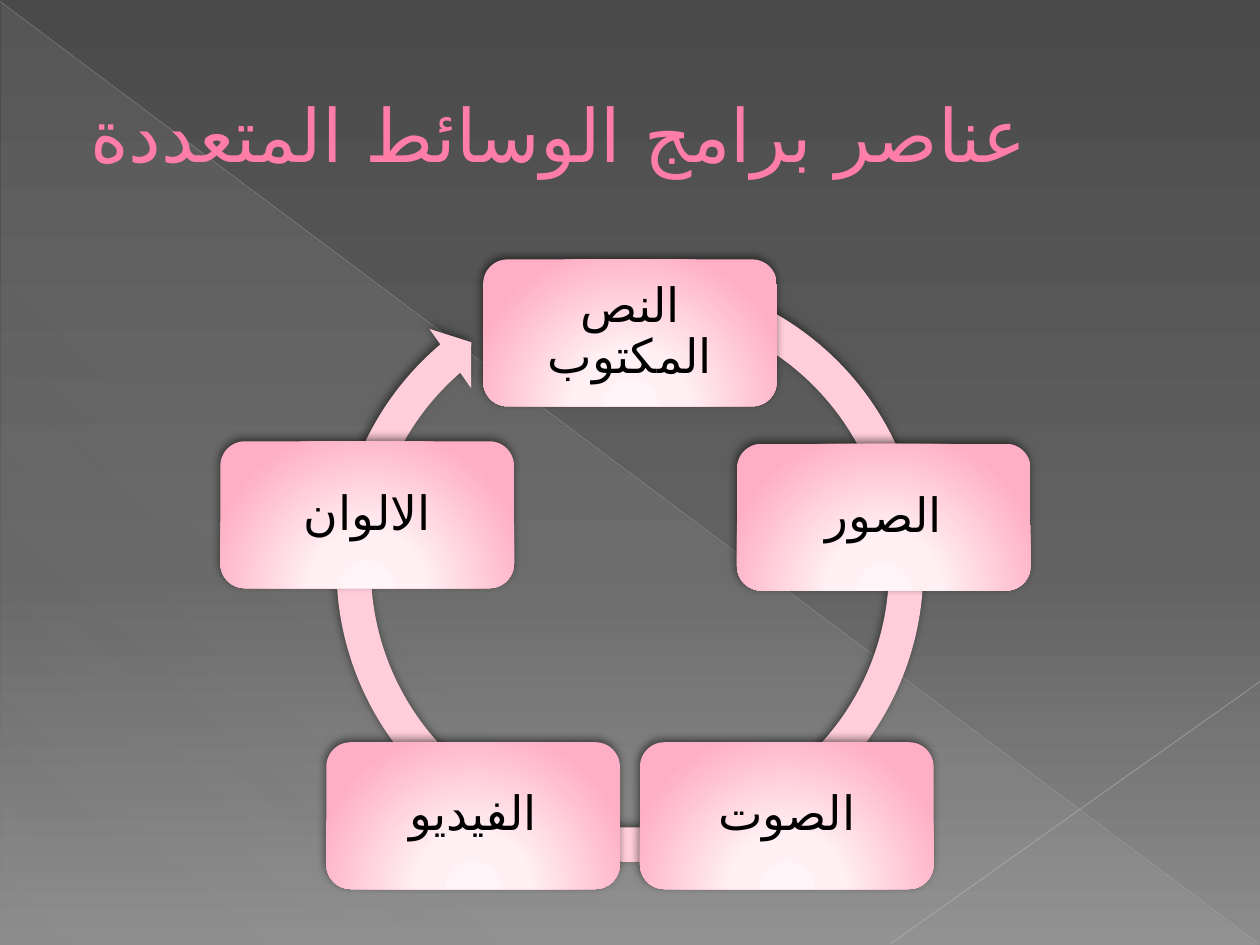
from dataclasses import dataclass
from math import cos, radians, sin

from lxml.etree import SubElement
from pptx import Presentation
from pptx.dml.color import RGBColor
from pptx.enum.shapes import MSO_CONNECTOR as Connector, MSO_SHAPE as Preset
from pptx.enum.text import MSO_ANCHOR as Anchor, PP_ALIGN as Align
from pptx.oxml import parse_xml
from pptx.oxml.ns import nsdecls, qn
from pptx.util import Cm, Pt

Stops = tuple[tuple[int, str, int], ...]  # position %, colour, opacity %


@dataclass(frozen=True)
class Theme:
    font: str = "Quicksand"
    arabic_font: str = "DejaVu Sans"  # Quicksand has no Arabic letters
    title_size: float = 42
    card_size: float = 27
    title: str = "FF7DA7"
    title_outline: str = "B12761"
    card_text: str = "000000"
    ring: str = "FFCEDA"
    shadow: str = "000000"
    backdrop: Stops = ((0, "4A4A4A", 100), (60, "626262", 100), (100, "8C8C8C", 100))
    sheen: Stops = ((0, "D2D2D2", 10), (70, "D2D2D2", 8), (100, "D2D2D2", 1))
    card: Stops = ((0, "FFF4F7", 100), (34, "FFF0F3", 100), (100, "FFAFC5", 100))


@dataclass(frozen=True)
class Ray:
    start: tuple[float, float]
    end: tuple[float, float]
    color: str
    width: float
    opacity: int


@dataclass(frozen=True)
class Element:
    label: str
    nudge: tuple[float, float] = (0, 0)


THEME = Theme()
RAYS = (
    Ray((0, 0.03), (25.37, 19.02), "BFBFBF", 0.39, 35),
    Ray((25.4, 13.74), (17.96, 19.02), "C6C6C6", 0.47, 45),
)
ELEMENTS = (
    Element("النص المكتوب"),
    Element("الصور"),
    Element("الصوت"),
    Element("الفيديو"),
    Element("الالوان", (-0.18, -0.05)),
)
CENTER_X, CENTER_Y, RADIUS = 12.7, 12.09, 5.38
CARD_W, CARD_H = 5.92, 2.96
RING_SIZE, RING_TOP = 12.6, 5.16
RING_ADJUSTMENTS = (0.055, 3.307, 137.661, 173.92, 0.058)
LINEAR = '<a:lin ang="{}" scaled="0"/>'
CARD_GLOW = ('<a:path path="circle"><a:fillToRect l="50000" t="155000" '
             'r="50000" b="-55000"/></a:path>')


def set_gradient(fill, properties, stops: Stops, direction: str) -> None:
    fill.solid()
    marks = "".join(
        f'<a:gs pos="{pos * 1000}"><a:srgbClr val="{color}">'
        f'<a:alpha val="{opacity * 1000}"/></a:srgbClr></a:gs>'
        for pos, color, opacity in stops)
    gradient = parse_xml(f'<a:gradFill {nsdecls("a")} rotWithShape="1">'
                         f'<a:gsLst>{marks}</a:gsLst>{direction}</a:gradFill>')
    properties.replace(properties.find(qn("a:solidFill")), gradient)


def add_shadow(shape) -> None:
    shape.shadow.inherit = False
    effects = shape.element.spPr.find(qn("a:effectLst"))
    effects.append(parse_xml(
        f'<a:outerShdw {nsdecls("a")} blurRad="{Pt(5)}" dist="{Pt(2)}" '
        f'dir="{245 * 60000}" rotWithShape="0"><a:srgbClr val="{THEME.shadow}">'
        '<a:alpha val="50000"/></a:srgbClr></a:outerShdw>'))


def add_rtl_run(paragraph, text: str, size: float, color: str):
    paragraph._p.get_or_add_pPr().set("rtl", "1")
    run = paragraph.add_run()
    run.text = text
    run.font.size = Pt(size)
    run.font.name = THEME.font
    run.font.color.rgb = RGBColor.from_string(color)
    SubElement(run.font._element, qn("a:cs")).set("typeface", THEME.arabic_font)
    return run


def add_ray(slide, ray: Ray) -> None:
    line = slide.shapes.add_connector(
        Connector.STRAIGHT, *(Cm(v) for v in ray.start + ray.end))
    line.line.width = Pt(ray.width)
    line.line.color.rgb = RGBColor.from_string(ray.color)
    properties = line.element.spPr
    color = properties.find(".//" + qn("a:srgbClr"))
    SubElement(color, qn("a:alpha")).set("val", str(ray.opacity * 1000))
    SubElement(properties, qn("a:effectLst"))


def add_backdrop(slide) -> None:
    fill = slide.background.fill
    fill.solid()
    set_gradient(fill, slide.element.find(".//" + qn("p:bgPr")),
                 THEME.backdrop, LINEAR.format(90 * 60000))
    sheen = slide.shapes.add_shape(
        Preset.RIGHT_TRIANGLE, Cm(0.03), Cm(0.05), Cm(25.35), Cm(19))
    sheen.shadow.inherit = False
    sheen.line.fill.background()
    set_gradient(sheen.fill, sheen.element.spPr, THEME.sheen, LINEAR.format(133 * 60000))
    for ray in RAYS:
        add_ray(slide, ray)


def add_title(slide, text: str) -> None:
    title = slide.shapes.add_textbox(Cm(1.27), Cm(0.74), Cm(22.86), Cm(3.89))
    frame = title.text_frame
    frame.word_wrap = True
    frame.vertical_anchor = Anchor.MIDDLE
    frame.margin_left = Cm(0.55)
    paragraph = frame.paragraphs[0]
    paragraph.alignment = Align.LEFT
    paragraph._p.get_or_add_pPr().set("marL", str(Cm(1.35)))
    run = add_rtl_run(paragraph, text, THEME.title_size, THEME.title)
    run.font._element.insert(0, parse_xml(
        f'<a:ln {nsdecls("a")} w="{Pt(0.5)}"><a:solidFill>'
        f'<a:srgbClr val="{THEME.title_outline}"/></a:solidFill></a:ln>'))


def add_ring(cycle) -> None:
    ring = cycle.shapes.add_shape(
        Preset.CIRCULAR_ARROW, Cm(CENTER_X - RING_SIZE / 2), Cm(RING_TOP),
        Cm(RING_SIZE), Cm(RING_SIZE))
    for index, value in enumerate(RING_ADJUSTMENTS):
        ring.adjustments[index] = value
    ring.fill.solid()
    ring.fill.fore_color.rgb = RGBColor.from_string(THEME.ring)
    ring.line.fill.background()
    add_shadow(ring)


def add_card(cycle, element: Element, angle: float) -> None:
    x = CENTER_X + RADIUS * sin(angle) + element.nudge[0]
    y = CENTER_Y - RADIUS * cos(angle) + element.nudge[1]
    card = cycle.shapes.add_shape(
        Preset.ROUNDED_RECTANGLE, Cm(x - CARD_W / 2), Cm(y - CARD_H / 2),
        Cm(CARD_W), Cm(CARD_H))
    set_gradient(card.fill, card.element.spPr, THEME.card, CARD_GLOW)
    card.line.fill.background()
    add_shadow(card)
    frame = card.text_frame
    frame.word_wrap = True
    frame.vertical_anchor = Anchor.MIDDLE
    frame.margin_left = frame.margin_right = Cm(0.43)
    frame.margin_top = frame.margin_bottom = Cm(0.43)
    paragraph = frame.paragraphs[0]
    paragraph.alignment = Align.CENTER
    paragraph.line_spacing = 0.9
    after = SubElement(paragraph._p.get_or_add_pPr(), qn("a:spcAft"))
    SubElement(after, qn("a:spcPct")).set("val", "35000")
    add_rtl_run(paragraph, element.label, THEME.card_size, THEME.card_text)


def main() -> None:
    deck = Presentation()
    deck.slide_width, deck.slide_height = Cm(25.4), Cm(19.05)
    slide = deck.slides.add_slide(deck.slide_layouts[6])

    # Background and heading
    add_backdrop(slide)
    add_title(slide, "عناصر برامج الوسائط المتعددة")

    # Cycle: ring first, then cards clockwise from the top
    cycle = slide.shapes.add_group_shape()
    add_ring(cycle)
    for index, element in enumerate(ELEMENTS):
        add_card(cycle, element, radians(index * 360 / len(ELEMENTS)))

    deck.save("out.pptx")


if __name__ == "__main__":
    main()
